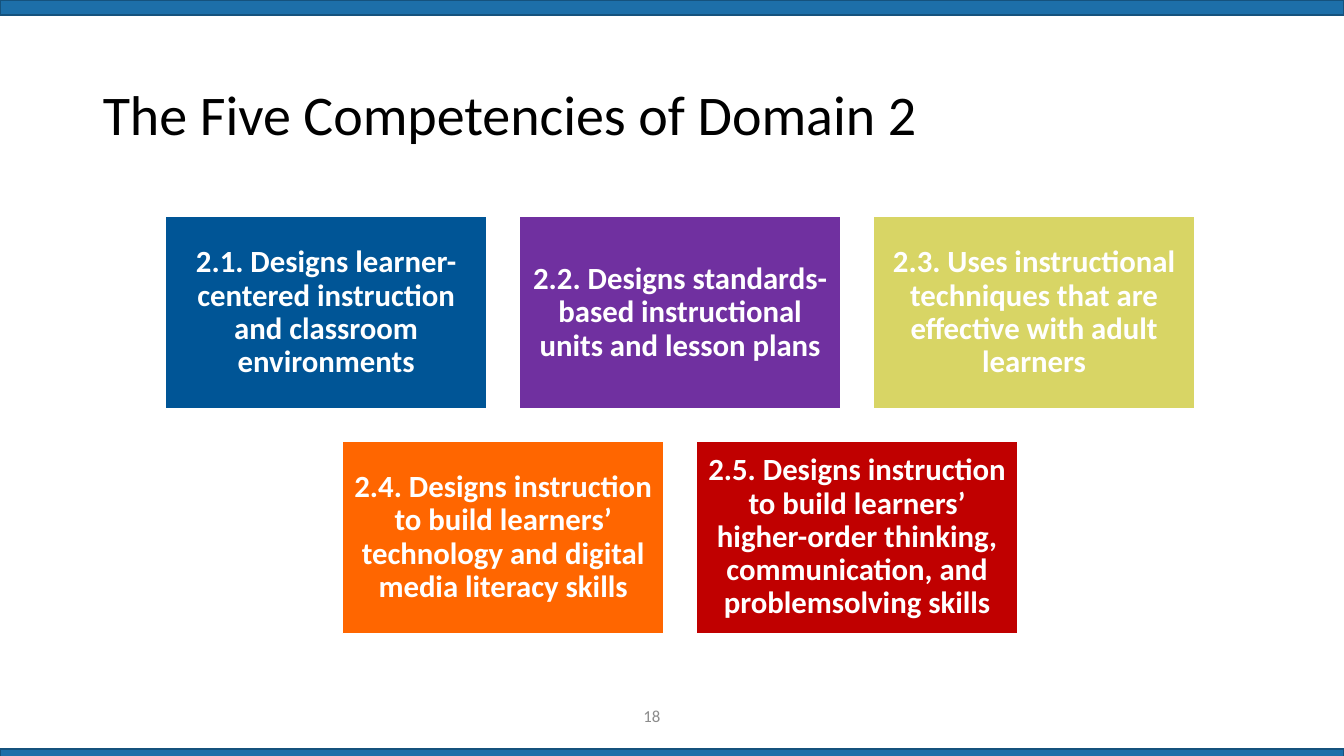
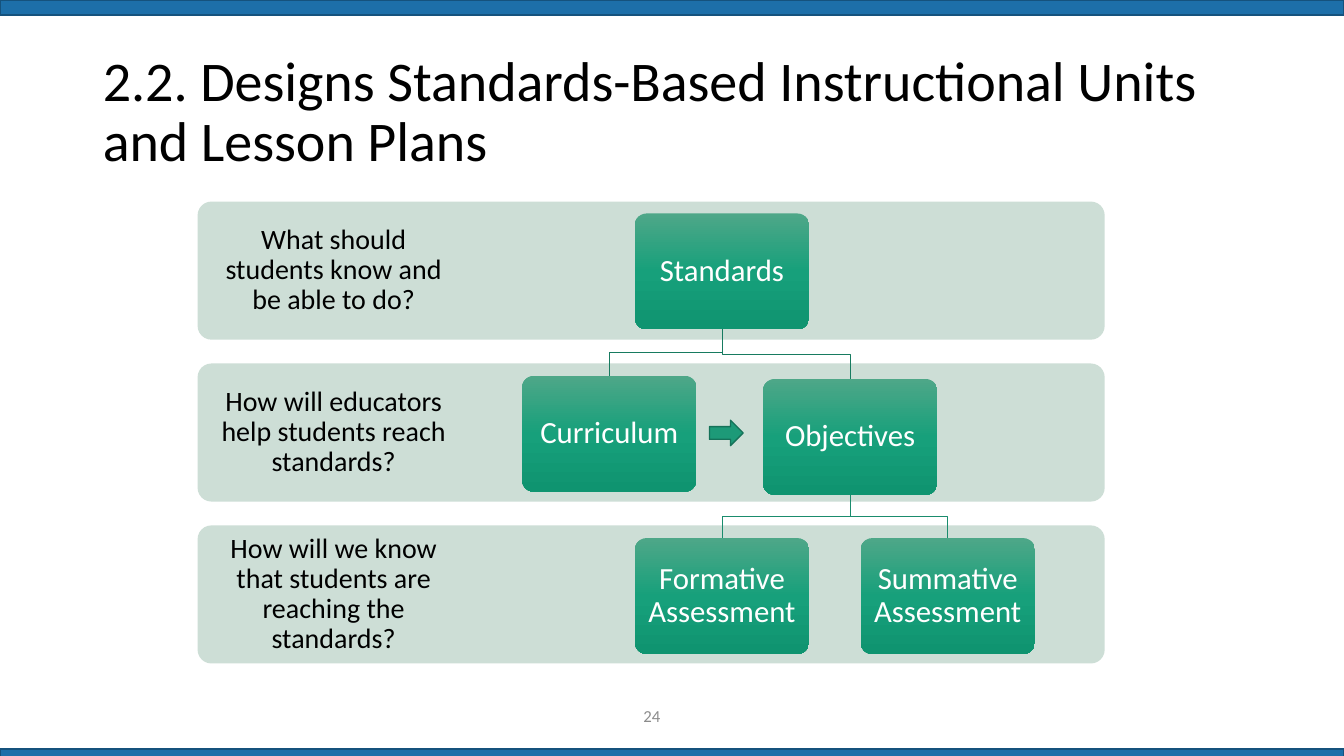
from copy import deepcopy

from pptx import Presentation
from pptx.dml.color import RGBColor
from pptx.enum import shapes as es, text as et
from pptx.oxml.ns import qn
from pptx.util import Cm, Pt

FONT = "Calibri"
WIDE, HIGH = 33.87, 19.05
HEX = {
    "band": "1D6FA9", "edge": "15527D", "ink": "000000", "white": "FFFFFF",
    "gray": "8C8C8C", "panel": "CDDED6", "arrow": "1D9A78", "rim": "157259",
    "upper": "177B60", "lower": "1A8C6D", "blue": "005596",
    "violet": "7030A0", "olive": "D8D565", "orange": "FF6600", "red": "C00000",
}
GREENS = [(0, "4EA788"), (0.5, "17A07B"), (1, "0F9470")]

TILES = [
    [("2.1. Designs learner-centered instruction and classroom environments", "blue"),
     ("2.2. Designs standards-based instructional units and lesson plans", "violet"),
     ("2.3. Uses instructional techniques that are effective with adult learners", "olive")],
    [("2.4. Designs instruction to build learners’ technology and digital "
      "media literacy skills", "orange"),
     ("2.5. Designs instruction to build learners’ higher-order thinking, "
      "communication, and problemsolving skills", "red")],
]
ASKS = [
    "What should students know and be able to do?",
    "How will educators help students reach standards?",
    "How will we know that students are reaching the standards?",
]
NODES = {
    "Standards": (16, 5.38),
    "Curriculum": (13.16, 9.47),
    "Objectives": (19.23, 9.55),
    "Formative Assessment": (16, 13.56),
    "Summative Assessment": (21.69, 13.56),
}
LINKS = [
    ("Standards", "Curriculum", "upper"),
    ("Standards", "Objectives", "upper"),
    ("Objectives", "Formative Assessment", "lower"),
    ("Objectives", "Summative Assessment", "lower"),
]


def rgb(name):
    return RGBColor.from_string(HEX[name])


def write(shape, words, size, color, bold=False, align="CENTER", space=0.9,
          left=0.23, right=0.23):
    frame = shape.text_frame
    frame.text = words
    frame.word_wrap = True
    frame.auto_size = et.MSO_AUTO_SIZE.NONE
    frame.vertical_anchor = et.MSO_ANCHOR.MIDDLE
    frame.margin_left, frame.margin_right = Cm(left), Cm(right)
    frame.margin_top = frame.margin_bottom = 0
    para = frame.paragraphs[0]
    para.alignment = et.PP_ALIGN[align]
    para.line_spacing = space
    font = para.runs[0].font
    font.name, font.size, font.bold = FONT, Pt(size), bold
    font.color.rgb = rgb(color)


def block(slide, kind, box, fill, line=None):
    shape = slide.shapes.add_shape(es.MSO_SHAPE[kind], *map(Cm, box))
    shape.shadow.inherit = False
    shape.fill.solid()
    shape.fill.fore_color.rgb = rgb(fill)
    if line:
        shape.line.color.rgb = rgb(line)
        shape.line.width = Pt(1)
    else:
        shape.line.fill.background()
    if kind == "ROUNDED_RECTANGLE":
        shape.adjustments[0] = 0.1
    return shape


def shade(shape):
    """Fill a shape with the green gradient, from top to bottom."""
    shape.fill.gradient()
    shape.fill.gradient_angle = 270
    stops = shape.element.spPr.find(".//" + qn("a:gsLst"))
    stops.append(deepcopy(stops[0]))
    for stop, (pos, code) in zip(shape.fill.gradient_stops, GREENS):
        stop.position = pos
        stop.color.rgb = RGBColor.from_string(code)


def link(slide, top, low, color):
    """Draw a stepped line from the foot of one node to the head of another."""
    x, y = top.left + top.width // 2, top.top + top.height
    end = low.left + low.width // 2
    mid = (y + low.top) // 2
    pen = slide.shapes.build_freeform(x, y)
    pen.add_line_segments([(x, mid), (end, mid), (end, low.top)], close=False)
    step = pen.convert_to_shape()
    step.shadow.inherit = False
    step.fill.background()
    step.line.color.rgb = rgb(color)
    step.line.width = Pt(0.5)


def bands(deck, slide):
    """Draw the top and bottom bands and move them to the slide master."""
    tree = deck.slide_master.shapes.element
    for top in (0, 18.87):
        band = block(slide, "RECTANGLE", (0, top, WIDE, 0.38), "band", "edge")
        tree.insert(2, band.element)


def start(deck, words, number, space=0.9):
    """Add a slide with its title and page number."""
    slide = deck.slides.add_slide(deck.slide_layouts[5])
    title = slide.shapes.title
    title.left, title.top, title.width, title.height = map(
        Cm, (2.34, 1.02, 29.21, 3.68))
    write(title, words, 40, "ink", align="LEFT", space=space, left=0.25)
    page = slide.shapes.add_textbox(*map(Cm, (12.62, 17.53, 7.62, 1.02)))
    write(page, number, 12, "gray", space=1)
    return slide


def grid(slide):
    """Lay out the tiles in rows that share one centre line."""
    wide, high, gap, centre = 8.11, 4.85, 0.81, 17.14
    for row, tiles in enumerate(TILES):
        span = len(tiles) * (wide + gap) - gap
        for col, (words, color) in enumerate(tiles):
            left = centre - span / 2 + col * (wide + gap)
            top = 5.46 + row * (high + gap)
            tile = block(slide, "RECTANGLE", (left, top, wide, high), color, "white")
            write(tile, words, 22, "white", bold=True)


def chain(slide):
    """Draw the question panels, the nodes and the lines between them."""
    for row, ask in enumerate(ASKS):
        box = (4.98, 5.08 + row * 4.08, 22.86, 3.48)
        panel = block(slide, "ROUNDED_RECTANGLE", box, "panel")
        write(panel, ask, 20, "ink", left=0.31, right=16.31)
    nodes = {}
    for words, spot in NODES.items():
        node = block(slide, "ROUNDED_RECTANGLE", (*spot, 4.39, 2.92), "arrow")
        shade(node)
        write(node, words, 22, "white")
        nodes[words] = node
    for top, low, color in LINKS:
        link(slide, nodes[top], nodes[low], color)
    block(slide, "RIGHT_ARROW", (17.88, 10.59, 0.85, 0.64), "arrow", "rim")


def main():
    deck = Presentation()
    deck.slide_width, deck.slide_height = Cm(WIDE), Cm(HIGH)
    slide = start(deck, "The Five Competencies of Domain 2", "18", Pt(48))
    bands(deck, slide)
    grid(slide)
    slide = start(
        deck, "2.2. Designs Standards-Based Instructional Units and Lesson Plans", "24")
    chain(slide)
    deck.save("out.pptx")


if __name__ == "__main__":
    main()
